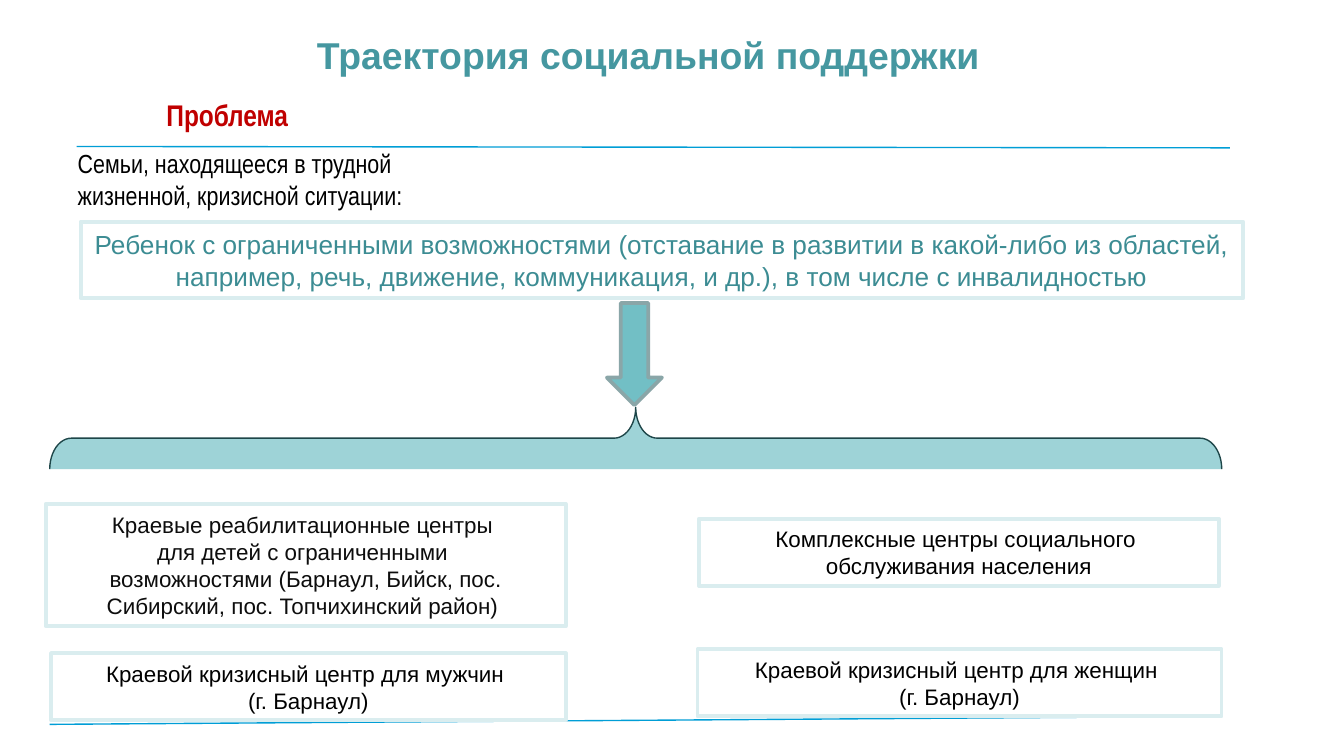
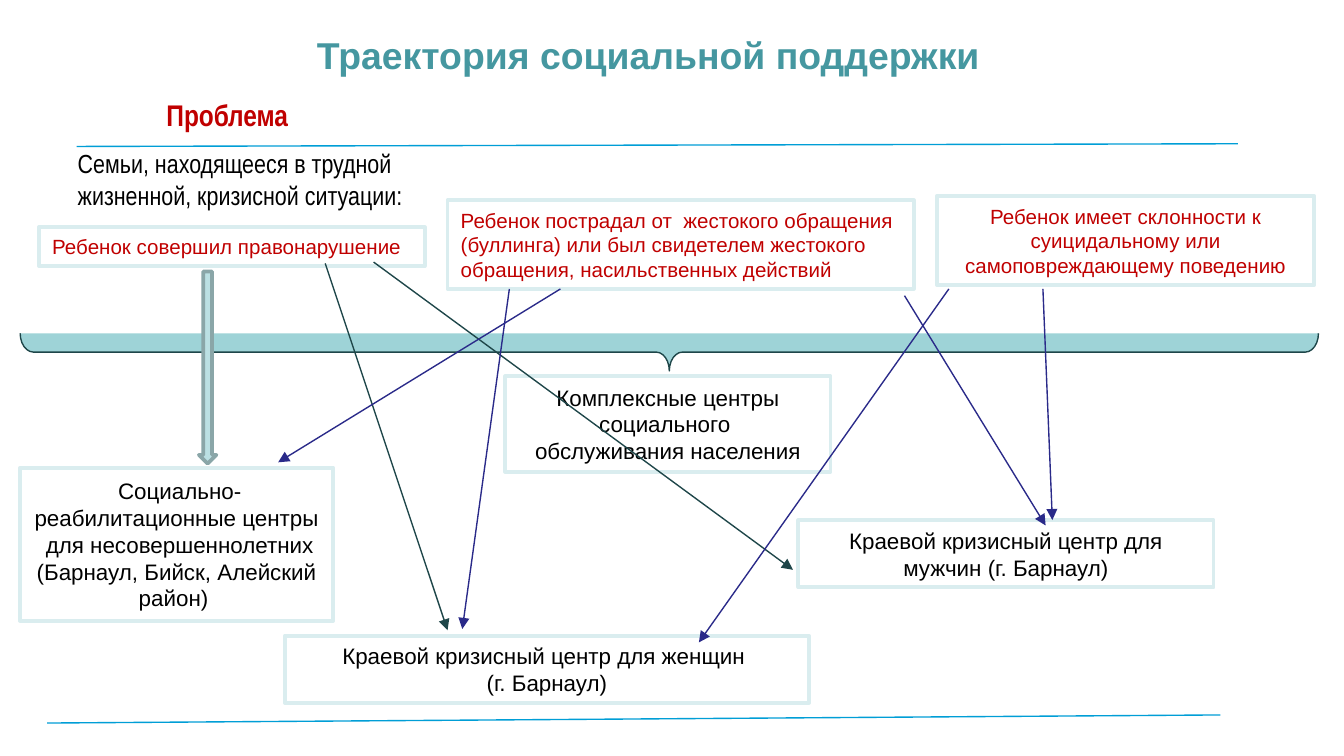
from pptx import Presentation
from pptx.dml.color import RGBColor
from pptx.enum.shapes import MSO_CONNECTOR, MSO_SHAPE
from pptx.enum.text import MSO_ANCHOR, PP_ALIGN
from pptx.oxml.ns import qn
from pptx.util import Pt
from lxml.etree import SubElement

PX = 9144
WIDE = 1000 * PX
HIGH = WIDE * 9 // 16
TONE = {
    "title": "4597A0", "red": "C00000", "teal": "3C8C93", "black": "000000",
    "soft": "0D0D0D", "white": "FFFFFF", "edge": "DAEDEF", "rule": "009ED6",
    "brace": "9ED3D7", "dark": "1E4649", "gray": "8AA6A8", "navy": "2A2A89",
    "arrow": "72BFC5", "pale": "BBE0E3",
}

TITLE = "Траектория социальной поддержки"
TITLE_AT = (34, 7, 897, 67)
LABELS = [
    ("Проблема", (114, 67, 118, 37), "red", {"size": Pt(16), "bold": True}),
    ("Семьи, находящееся в трудной жизненной, кризисной ситуации:",
     (48, 105, 338, 57), "black", {"size": Pt(14), "bold": False}),
]
WOMEN = "Краевой кризисный центр для женщин \n(г. Барнаул)"
MIXED = "Комплексные центры социального \nобслуживания населения"
MID, LEFT = PP_ALIGN.CENTER, PP_ALIGN.LEFT
BRACE, ARROW = MSO_SHAPE.RIGHT_BRACE, MSO_SHAPE.RIGHT_ARROW

SLIDES = [
    {
        "rules": [(57, 109, 915, 110), (37, 539, 909, 533)],
        "boxes": [
            ("Ребенок с ограниченными возможностями (отставание в развитии в какой-либо из областей, "
             "например, речь, движение, коммуникация, и др.), в том числе с инвалидностью",
             (60, 165, 865, 57), 14, "teal", MID),
            ("Краевые реабилитационные центры \nдля детей с ограниченными \n"
             "возможностями (Барнаул, Бийск, пос. Сибирский, пос. Топчихинский район) ",
             (34, 375, 387, 91), 12, "soft", MID),
            (WOMEN, (519, 483, 390, 50), 12, "black", MID),
            ("Краевой кризисный центр для мужчин \n(г. Барнаул)",
             (38, 486, 383, 50), 12, "black", MID),
            (MIXED, (520, 386, 387, 50), 12, "black", MID),
        ],
        "blocks": [
            (ARROW, (434, 243, 76, 41), 90, "arrow", "gray", 2, ()),
            (BRACE, (450, -110, 46, 872), 270, "brace", "dark", 0.75, (0.35, 0.5)),
        ],
        "links": [],
    },
    {
        "rules": [(57, 109, 921, 107), (35, 538, 908, 532)],
        "boxes": [
            ("Ребенок совершил правонарушение", (29, 169, 287, 29), 11, "red", LEFT),
            ("Ребенок имеет склонности к суицидальному или самоповреждающему поведению",
             (697, 146, 281, 66), 11, "red", MID),
            ("Ребенок пострадал от  жестокого обращения (буллинга) или был свидетелем "
             "жестокого обращения, насильственных действий",
             (333, 149, 347, 66), 11, "red", LEFT),
            (" Социально-реабилитационные центры\n"
             " для несовершеннолетних (Барнаул, Бийск, Алейский район) ",
             (15, 348, 233, 114), 12, "black", MID),
            (WOMEN, (212, 473, 390, 50), 12, "black", MID),
            ("Краевой кризисный центр для мужчин (г. Барнаул)",
             (594, 387, 309, 50), 12, "black", MID),
            (MIXED, (376, 280, 242, 71), 12, "black", MID),
        ],
        "blocks": [
            (BRACE, (484, -221, 28, 966), 90, "brace", "dark", 0.75, (0.35, 0.5)),
            (ARROW, (83, 267, 143, 13), 90, "pale", "gray", 2, ()),
        ],
        "links": [
            ("dark", (242, 196, 333, 469)),
            ("dark", (278, 195, 590, 424)),
            ("navy", (673, 220, 778, 391)),
            ("navy", (379, 215, 344, 468)),
            ("navy", (417, 215, 207, 344)),
            ("navy", (776, 215, 783, 387)),
            ("navy", (706, 215, 520, 478)),
        ],
    },
]


def scale(nums):
    return [n * PX for n in nums]


def tint(name):
    return RGBColor.from_string(TONE[name])


def apply(item, form):
    for key, val in form.items():
        setattr(item, key, val)


def write(shape, text, tone, align, font, anchor=MSO_ANCHOR.MIDDLE):
    frame = shape.text_frame
    frame.text = text
    apply(frame, {"word_wrap": True, "vertical_anchor": anchor})
    for para in frame.paragraphs:
        para.alignment = align
        apply(para.font, font)
        para.font.color.rgb = tint(tone)


def stroke(shape, tone, width):
    shape.line.color.rgb = tint(tone)
    shape.line.width = Pt(width)


def block(slide, kind, at, fill, edge, width):
    shape = slide.shapes.add_shape(kind, *scale(at))
    shape.shadow.inherit = False
    shape.fill.solid()
    shape.fill.fore_color.rgb = tint(fill)
    stroke(shape, edge, width)
    return shape


def link(slide, ends, tone, head=False):
    line = slide.shapes.add_connector(MSO_CONNECTOR.STRAIGHT, *scale(ends))
    stroke(line, tone, 0.75)
    props = line._element.spPr
    if head:
        SubElement(props.find(qn("a:ln")), qn("a:tailEnd"), type="triangle")
    SubElement(props, qn("a:effectLst"))


def build(deck, data):
    slide = deck.slides.add_slide(deck.slide_layouts[5])
    title = slide.shapes.title
    apply(title, dict(zip(("left", "top", "width", "height"), scale(TITLE_AT))))
    write(title, TITLE, "title", MID, {"name": "Arial", "size": Pt(20), "bold": True})
    for ends in data["rules"]:
        link(slide, ends, "rule")
    for text, at, tone, font in LABELS:
        label = slide.shapes.add_textbox(*scale(at))
        write(label, text, tone, LEFT, {"name": "Arial Narrow", **font}, MSO_ANCHOR.TOP)
    for text, at, size, tone, align in data["boxes"]:
        box = block(slide, MSO_SHAPE.RECTANGLE, at, "white", "edge", 2)
        write(box, text, tone, align, {"name": "Arial", "size": Pt(size)})
    for kind, at, turn, fill, edge, width, bends in data["blocks"]:
        shape = block(slide, kind, at, fill, edge, width)
        shape.rotation = turn
        for i, bend in enumerate(bends):
            shape.adjustments[i] = bend
    for tone, ends in data["links"]:
        link(slide, ends, tone, True)


def main():
    deck = Presentation()
    apply(deck, {"slide_width": WIDE, "slide_height": HIGH})
    for data in SLIDES:
        build(deck, data)
    deck.save("out.pptx")


if __name__ == "__main__":
    main()
